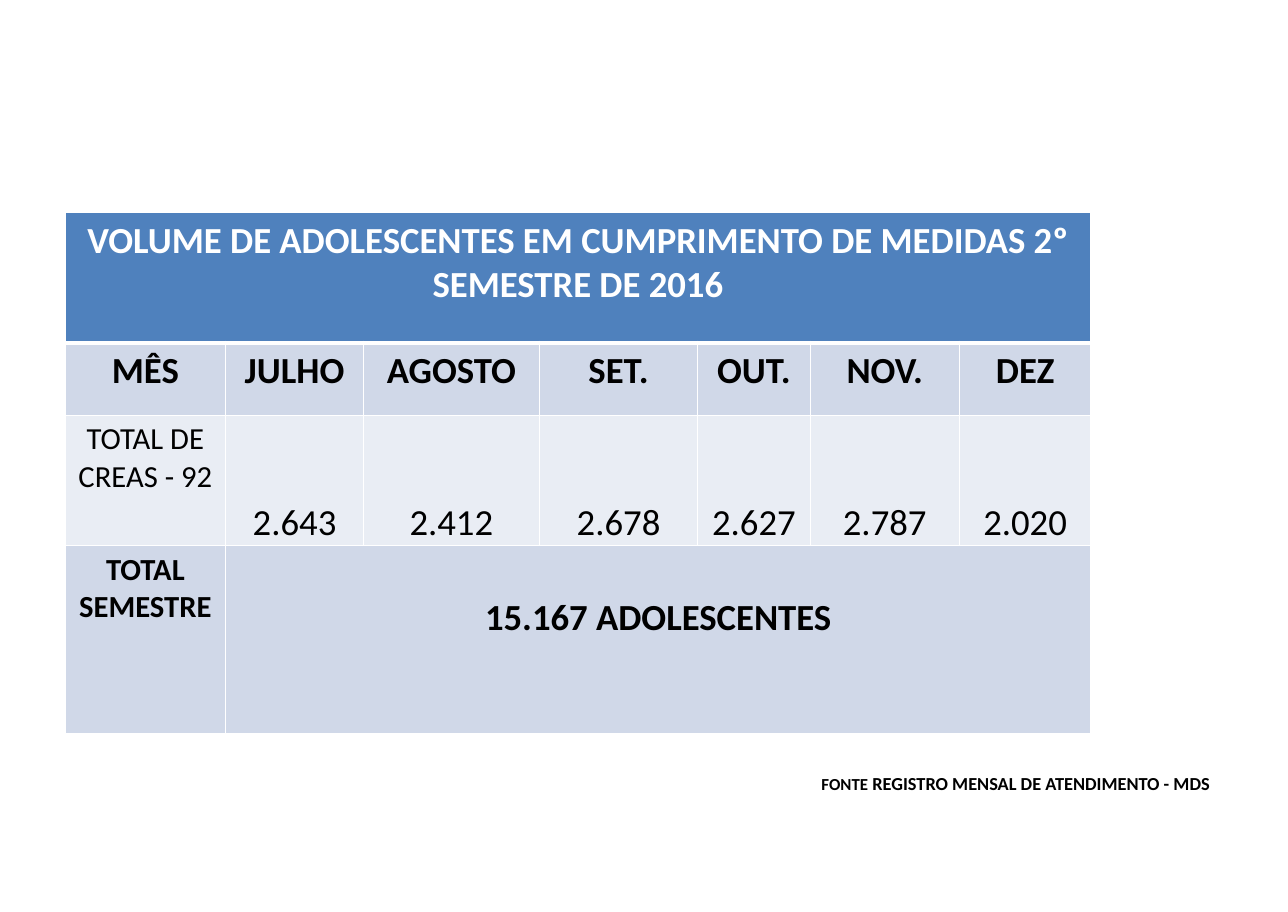
"""Build the slide with the table of adolescents per month, second half of 2016."""
from dataclasses import dataclass

from lxml import etree
from pptx import Presentation
from pptx import util as u
from pptx.dml import color
from pptx.enum import text
from pptx.oxml import ns

COLORS = {
    "header": "4F81BD",
    "band": "D0D8E8",
    "light": "E9EDF4",
    "white": "FFFFFF",
    "black": "000000",
}
FONT = "Calibri"
COLUMNS = (105, 90, 115, 103.5, 73.5, 97.5, 86)
ROWS = (85, 47.5, 85, 123)
MONTHS = ("JULHO", "AGOSTO", "SET.", "OUT.", "NOV.", "DEZ")
TOTALS = ("2.643", "2.412", "2.678", "2.627", "2.787", "2.020")
PADDING = (7.2, 3.6, 7.2, 3.6)
TIGHT = (0.7, 0.7, 0.7, 0)
LOWERED = (7.2, 33, 7.2, 3.6)


@dataclass(frozen=True)
class Entry:
    row: int
    column: int
    words: str
    fill: str
    size: float = 24
    bold: bool = True
    ink: str = "black"
    columns: int = 1
    margins: tuple[float, float, float, float] = PADDING
    anchor: text.MSO_ANCHOR = text.MSO_ANCHOR.TOP


ENTRIES = [
    Entry(0, 0, "VOLUME DE ADOLESCENTES EM CUMPRIMENTO DE MEDIDAS 2º SEMESTRE DE 2016",
          "header", ink="white", columns=7),
    *(Entry(1, column, words, "band") for column, words in enumerate(("MÊS", *MONTHS))),
    Entry(2, 0, "TOTAL DE CREAS - 92", "light", size=20, bold=False),
    *(Entry(2, column, words, "light", bold=False, margins=TIGHT,
            anchor=text.MSO_ANCHOR.BOTTOM)
      for column, words in enumerate(TOTALS, 1)),
    Entry(3, 0, "TOTAL SEMESTRE", "band", size=20),
    Entry(3, 1, "15.167 ADOLESCENTES", "band", columns=6, margins=LOWERED),
]


def rgb(name: str) -> color.RGBColor:
    return color.RGBColor.from_string(COLORS[name])


def add_span(para, words: str, *, size: float, bold: bool = True, ink: str = "black") -> None:
    span = para.add_run()
    span.text = words
    span.font.name = FONT
    span.font.size = u.Pt(size)
    span.font.bold = bold
    span.font.color.rgb = rgb(ink)


def set_margins(target, margins: tuple[float, float, float, float]) -> None:
    for side, length in zip(("left", "top", "right", "bottom"), margins):
        setattr(target, f"margin_{side}", u.Pt(length))


def add_borders(cell, row: int) -> None:
    properties = cell._tc.get_or_add_tcPr()
    thick = {(0, "lnB"), (1, "lnT")}
    for side in ("lnL", "lnR", "lnT", "lnB"):
        width = u.Pt(3 if (row, side) in thick else 1)
        line = etree.SubElement(properties, ns.qn(f"a:{side}"), w=str(width))
        solid = etree.SubElement(line, ns.qn("a:solidFill"))
        etree.SubElement(solid, ns.qn("a:srgbClr"), val=COLORS["white"])


def fill_entry(table, entry: Entry) -> None:
    cell = table.cell(entry.row, entry.column)
    if entry.columns > 1:
        cell.merge(table.cell(entry.row, entry.column + entry.columns - 1))
    for column in range(entry.column, entry.column + entry.columns):
        part = table.cell(entry.row, column)
        add_borders(part, entry.row)
        part.fill.solid()
        part.fill.fore_color.rgb = rgb(entry.fill)
    set_margins(cell, entry.margins)
    cell.vertical_anchor = entry.anchor
    para = cell.text_frame.paragraphs[0]
    para.alignment = text.PP_ALIGN.CENTER
    add_span(para, entry.words, size=entry.size, bold=entry.bold, ink=entry.ink)


def add_month_table(page) -> None:
    frame = page.shapes.add_table(len(ROWS), len(COLUMNS), u.Pt(42.5), u.Pt(139),
                                  u.Pt(sum(COLUMNS)), u.Pt(sum(ROWS)))
    table = frame.table
    for column, width in zip(table.columns, COLUMNS):
        column.width = u.Pt(width)
    for row, height in zip(table.rows, ROWS):
        row.height = u.Pt(height)
    for entry in ENTRIES:
        fill_entry(table, entry)


def add_source(page) -> None:
    box = page.shapes.add_textbox(u.Pt(324), u.Pt(501), u.Pt(474), u.Pt(21.6))
    box.text_frame.word_wrap = True
    set_margins(box.text_frame, PADDING)
    para = box.text_frame.paragraphs[0]
    para.alignment = text.PP_ALIGN.RIGHT
    add_span(para, "FONTE", size=11)
    add_span(para, " REGISTRO MENSAL DE ATENDIMENTO - MDS", size=12)


def main() -> None:
    deck = Presentation()
    deck.slide_width = u.Pt(841.68)
    deck.slide_height = u.Pt(596.16)
    page = deck.slides.add_slide(deck.slide_layouts[6])
    add_month_table(page)
    add_source(page)
    deck.save("out.pptx")


if __name__ == "__main__":
    main()
